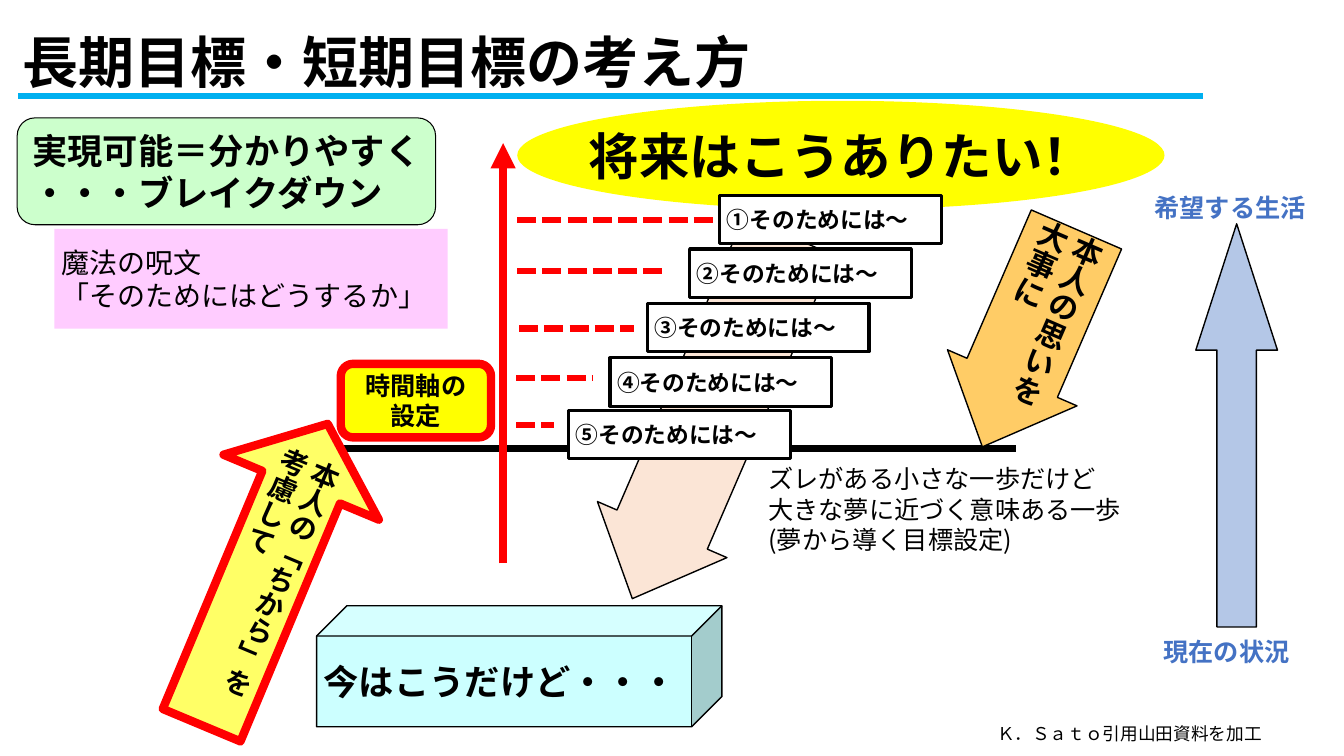
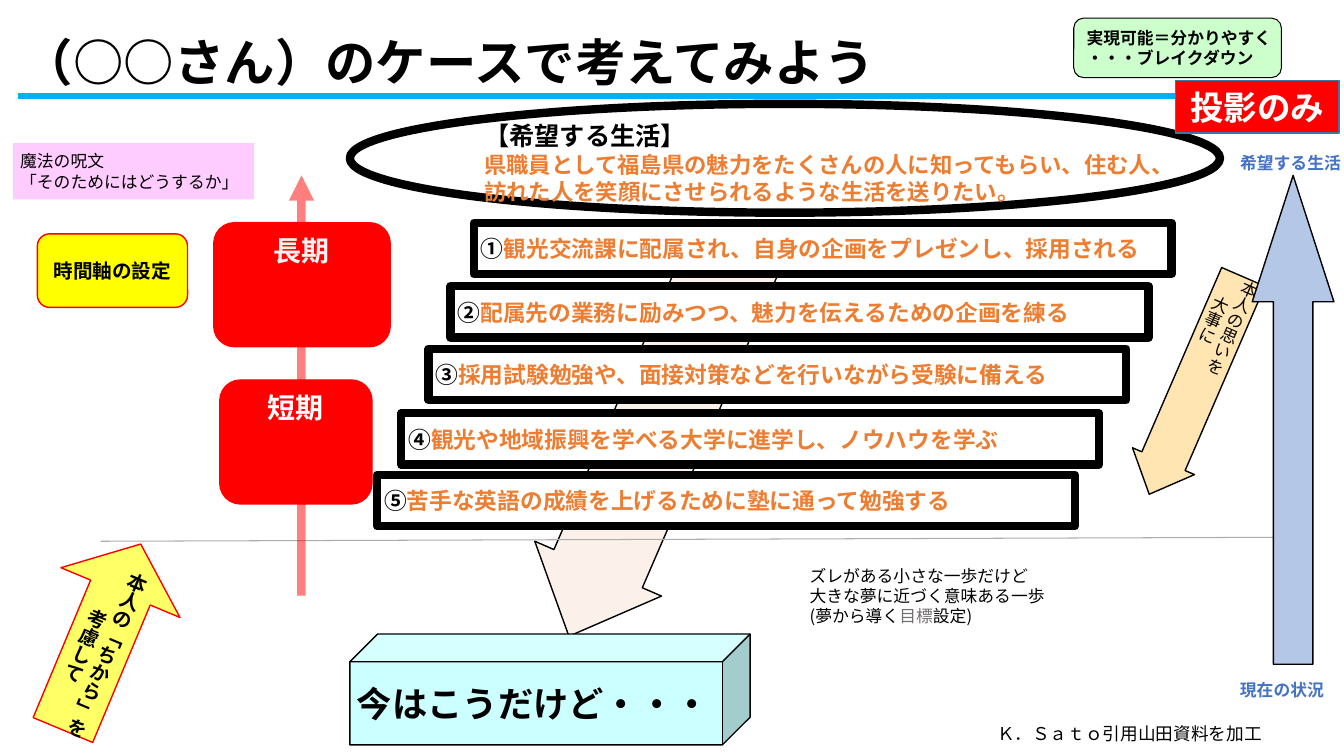
from lxml.etree import SubElement
from pptx import Presentation
from pptx.dml.color import RGBColor
from pptx.enum.dml import MSO_LINE
from pptx.enum.shapes import MSO_CONNECTOR, MSO_SHAPE
from pptx.enum.text import MSO_ANCHOR, MSO_AUTO_SIZE, PP_ALIGN
from pptx.oxml.ns import qn
from pptx.util import Emu, Pt

SCALE = 9144
FONT = "Noto Sans CJK JP"
COLORS = {
    "black": "000000", "white": "FFFFFF", "off_white": "F2F2F2", "red": "FF0000",
    "yellow": "FFFF00", "lemon": "FFFF66", "amber": "FFCC66", "peach": "FBE5D6",
    "mint": "CCFFCC", "pink": "FFCCFF", "cyan": "CCFFFF", "sky": "00B0F0",
    "pale_blue": "B4C7E7", "blue": "4472C4", "steel": "43739E",
    "orange": "ED7D31", "gray": "767171", "light_gray": "AFABAB",
}
NARROW = (7, 1, 7, 1)
NORMAL = (10, 5, 10, 5)
LEFT, CENTER = PP_ALIGN.LEFT, PP_ALIGN.CENTER
BIG_ARROW = (0.697, 0.533)


def px(length):
    """Turn px into EMU."""
    return Emu(round(length * SCALE))


def rgb(name):
    """Look up a named colour."""
    return RGBColor.from_string(COLORS[name])


def set_opacity(color_format_parent, percent):
    """Add an alpha value to the solid fill below an element."""
    if percent < 100:
        color = color_format_parent.find(qn("a:solidFill")).find(qn("a:srgbClr"))
        SubElement(color, qn("a:alpha")).set("val", str(percent * 1000))


def lines(texts, size, color="black"):
    """Make one single-run paragraph from each text."""
    return [[(text, size, color)] for text in texts]


def write(shape, paragraphs, bold=False, align=LEFT, anchor=MSO_ANCHOR.MIDDLE,
          insets=NARROW, wrap=False, vertical=False, spacing=None):
    """Fill a shape with paragraphs of (text, size, colour) runs."""
    frame = shape.text_frame
    frame.word_wrap = wrap
    frame.vertical_anchor = anchor
    frame.margin_left, frame.margin_top, frame.margin_right, frame.margin_bottom = map(px, insets)
    if vertical:
        frame._txBody.bodyPr.set("vert", "eaVert")
    for index, runs in enumerate(paragraphs):
        paragraph = frame.add_paragraph() if index else frame.paragraphs[0]
        paragraph.alignment = align
        if spacing:
            paragraph.line_spacing = spacing
        for text, size, color in runs:
            run = paragraph.add_run()
            run.text = text
            run.font.name = FONT
            run.font.size = Pt(size)
            run.font.bold = bold
            run.font.color.rgb = rgb(color)
            SubElement(run._r.get_or_add_rPr(), qn("a:ea")).set("typeface", FONT)


def add_block(slide, kind, box, fill, line=None, width=1, rotation=0, adjust=(), opacity=100):
    """Add a filled preset shape."""
    shape = slide.shapes.add_shape(kind, *map(px, box))
    shape.shadow.inherit = False
    shape.rotation = rotation
    for index, value in enumerate(adjust):
        shape.adjustments[index] = value
    shape.fill.solid()
    shape.fill.fore_color.rgb = rgb(fill)
    set_opacity(shape._element.spPr, opacity)
    if line:
        shape.line.color.rgb = rgb(line)
        shape.line.width = Pt(width)
    else:
        shape.line.fill.background()
    return shape


def add_label(slide, box, paragraphs, grow=True, **style):
    """Add a wrapped text box."""
    shape = slide.shapes.add_textbox(*map(px, box))
    write(shape, paragraphs, **{"anchor": MSO_ANCHOR.TOP, "wrap": True, **style})
    if grow:
        shape.text_frame.auto_size = MSO_AUTO_SIZE.SHAPE_TO_FIT_TEXT


def add_line(slide, start, end, color, width, dashed=False, arrow=False, opacity=100):
    """Add a straight line, optionally dashed or with an arrowhead."""
    connector = slide.shapes.add_connector(MSO_CONNECTOR.STRAIGHT, *map(px, (*start, *end)))
    connector.line.color.rgb = rgb(color)
    connector.line.width = Pt(width)
    if dashed:
        connector.line.dash_style = MSO_LINE.SQUARE_DOT
    outline = connector.line._get_or_add_ln()
    set_opacity(outline, opacity)
    if arrow:
        SubElement(outline, qn("a:tailEnd")).set("type", "triangle")
    SubElement(connector._element.spPr, qn("a:effectLst"))


def draw_frame(slide, title, size):
    """Draw the title, its rule and the credit line."""
    add_line(slide, (18, 95), (1193, 95), "sky", 4.5)
    add_label(slide, (13, 13, 1150, 104), lines([title], size), grow=False, bold=True,
              anchor=MSO_ANCHOR.MIDDLE, insets=NORMAL, spacing=0.9)
    add_label(slide, (979, 712, 321, 32), lines(["Ｋ．Ｓａｔｏ引用山田資料を加工"], 12.6), insets=NORMAL)


def draw_present(slide, box):
    """Draw the block for the present state."""
    cube = add_block(slide, MSO_SHAPE.CUBE, box, "cyan", "black", adjust=(0.25,))
    write(cube, lines(["今はこうだけど・・・"], 25.2), bold=True)


def draw_descent(slide, box, opacity=100):
    """Draw the wide arrow behind the steps."""
    add_block(slide, MSO_SHAPE.DOWN_ARROW, box, "peach", "black",
              rotation=23.4, adjust=BIG_ARROW, opacity=opacity)


def draw_strength(slide, box, size, width, align):
    """Draw the rising arrow for the person's own strength."""
    arrow = add_block(slide, MSO_SHAPE.UP_ARROW, box, "lemon", "red", width,
                      rotation=22.7, adjust=(0.5, 0.408))
    write(arrow, lines(["本人の「ちから」を", "考慮して"], size), bold=True, align=align, vertical=True)


def draw_wish(slide, box, size, bold, align, opacity=100):
    """Draw the falling arrow for the person's wishes."""
    arrow = add_block(slide, MSO_SHAPE.DOWN_ARROW, box, "amber", "black",
                      rotation=23.4, adjust=BIG_ARROW, opacity=opacity)
    write(arrow, lines(["本人の思いを", "大事に"], size), bold=bold, align=align, vertical=True)


def draw_spell(slide, box, size):
    """Draw the pink box with the guiding question."""
    block = add_block(slide, MSO_SHAPE.RECTANGLE, box, "pink")
    write(block, lines(["魔法の呪文", "「そのためにはどうするか」"], size))


def draw_breakdown(slide, box, size):
    """Draw the green box on breaking goals down."""
    block = add_block(slide, MSO_SHAPE.ROUNDED_RECTANGLE, box, "mint", "black", 0.75)
    write(block, lines(["実現可能＝分かりやすく", "・・・ブレイクダウン"], size), bold=True, insets=NORMAL)


def draw_time_box(slide, box, size, width):
    """Draw the yellow box naming the time axis."""
    block = add_block(slide, MSO_SHAPE.ROUNDED_RECTANGLE, box, "yellow", "red", width)
    write(block, lines(["時間軸の設定"], size), bold=True, align=CENTER, insets=NORMAL, wrap=True)


def draw_time_axis(slide, left, top, height, opacity=100):
    """Draw the red arrow of time, pointing up."""
    add_line(slide, (left, top + height), (left, top), "red", 6, arrow=True, opacity=opacity)


def draw_gap_note(slide, box, size, accent):
    """Write the note on small steps, with one accented word."""
    paragraphs = lines(["ズレがある小さな一歩だけど", "大きな夢に近づく意味ある一歩"], size)
    paragraphs.append([("(夢から導く", size, "black"), ("目標", size, accent), ("設定)", size, "black")])
    add_label(slide, box, paragraphs)


def draw_life_axis(slide, box, label, size, arrow_left, gap):
    """Draw the blue arrow between the labels for hoped-for life and present."""
    left, top, width, height = box
    label_width, label_height = label
    add_block(slide, MSO_SHAPE.DOWN_ARROW,
              (left + arrow_left, top + label_height, 81, height - 2 * label_height - gap),
              "pale_blue", "black", rotation=180, adjust=(0.483, 1.547))
    add_label(slide, (left, top + height - label_height, *label),
              lines(["現在の状況"], size, "blue"), bold=True, align=CENTER)
    add_label(slide, (left + width - label_width, top, *label),
              lines(["希望する生活"], size, "blue"), bold=True)


def draw_steps(slide, box, offsets, texts, width, color):
    """Draw the numbered steps, offset from the first step's box."""
    left, top, step_width, step_height = box
    for number, (right, down), text in zip("①②③④⑤", offsets, texts):
        step = add_block(slide, MSO_SHAPE.RECTANGLE,
                         (left + right, top + down, step_width, step_height), "white", "black", width)
        write(step, [[(number, 16.2, "black"), (text, 16.2, color)]], bold=True)


def draw_concept_slide(slide):
    """Draw the slide that explains long and short goals."""
    draw_descent(slide, (635, 218, 140, 392))
    add_line(slide, (249, 445), (1008, 445), "black", 4.5)
    draw_present(slide, (314, 601, 402, 120))
    future = add_block(slide, MSO_SHAPE.OVAL, (513, 100, 642, 108), "yellow")
    write(future, lines(["将来はこうありたい！"], 36), bold=True, align=CENTER)
    draw_strength(slide, (179, 408, 167, 324), 20, 6, LEFT)
    draw_spell(slide, (54, 227, 390, 99), 20)
    draw_wish(slide, (951, 218, 140, 235), 21.6, True, LEFT)
    draw_gap_note(slide, (755, 459, 383, 93), 18, "black")
    draw_breakdown(slide, (17, 117, 415, 106), 25.2)
    draw_frame(slide, "長期目標・短期目標の考え方", 40)
    draw_life_axis(slide, (1133, 190, 172, 472), (167, 32), 18, 53, 8)
    draw_time_axis(slide, 499, 142, 417)
    draw_time_box(slide, (338, 361, 149, 73), 18, 6)
    draw_steps(slide, (714, 194, 220, 48), [(0, 0), (-30, 53), (-72, 107), (-109, 161), (-150, 213)],
               ["そのためには～"] * 5, 2.25, "black")
    for start, end, height in [(513, 707, 218), (513, 660, 269), (515, 629, 326),
                               (512, 588, 375), (512, 549, 422)]:
        add_line(slide, (start, height), (end, height), "red", 4.5, dashed=True)


def draw_case_slide(slide):
    """Draw the slide that works through one person's case."""
    draw_descent(slide, (577, 239, 137, 409), 50)
    add_line(slide, (100, 537), (1284, 533), "light_gray", 0.75)
    draw_present(slide, (347, 629, 397, 110))
    hope = add_block(slide, MSO_SHAPE.OVAL, (347, 103, 863, 108), "white", "black", 6)
    wishes = ["県職員として福島県の魅力をたくさんの人に知ってもらい、住む人、",
              "訪れた人を笑顔にさせられるような生活を送りたい。"]
    write(hope, lines(["【希望する生活】"], 18) + lines(wishes, 16, "orange"),
          bold=True, anchor=MSO_ANCHOR.TOP)
    draw_strength(slide, (37, 532, 128, 200), 14, 1, CENTER)
    draw_spell(slide, (13, 142, 239, 56), 12)
    draw_wish(slide, (1153, 265, 67, 235), 12, False, CENTER, 50)
    draw_gap_note(slide, (796, 560, 383, 62), 12, "gray")
    draw_breakdown(slide, (1065, 18, 206, 59), 12)
    draw_frame(slide, "（○○さん）のケースで考えてみよう", 36)
    draw_life_axis(slide, (1210, 151, 136, 545), (123, 23), 12, 32, 14)
    draw_time_axis(slide, 299, 174, 417, 50)
    draw_time_box(slide, (37, 232, 149, 73), 14, 1)
    for term, color, box in [("長期", "off_white", (212, 221, 175, 123)),
                             ("短期", "white", (218, 377, 151, 123))]:
        period = add_block(slide, MSO_SHAPE.ROUNDED_RECTANGLE, box, "red", "red")
        write(period, lines([term], 20, color), bold=True, align=CENTER,
              anchor=MSO_ANCHOR.TOP, insets=NORMAL, wrap=True)
    goals = ["観光交流課に配属され、自身の企画をプレゼンし、採用される",
             "配属先の業務に励みつつ、魅力を伝えるための企画を練る",
             "採用試験勉強や、面接対策などを行いながら受験に備える",
             "観光や地域振興を学べる大学に進学し、ノウハウを学ぶ",
             "苦手な英語の成績を上げるために塾に通って勉強する"]
    draw_steps(slide, (470, 221, 692, 51), [(0, 0), (-23, 63), (-45, 125), (-72, 189), (-96, 250)],
               goals, 6, "orange")
    notice = add_block(slide, MSO_SHAPE.RECTANGLE, (1166, 80, 162, 52), "red", "steel")
    write(notice, lines(["投影のみ"], 24, "white"), bold=True, align=CENTER, insets=NORMAL, wrap=True)


def main():
    """Build and save the presentation."""
    presentation = Presentation()
    presentation.slide_width, presentation.slide_height = px(1333), px(750)
    for draw in (draw_concept_slide, draw_case_slide):
        draw(presentation.slides.add_slide(presentation.slide_layouts[6]))
    presentation.save("out.pptx")


if __name__ == "__main__":
    main()
